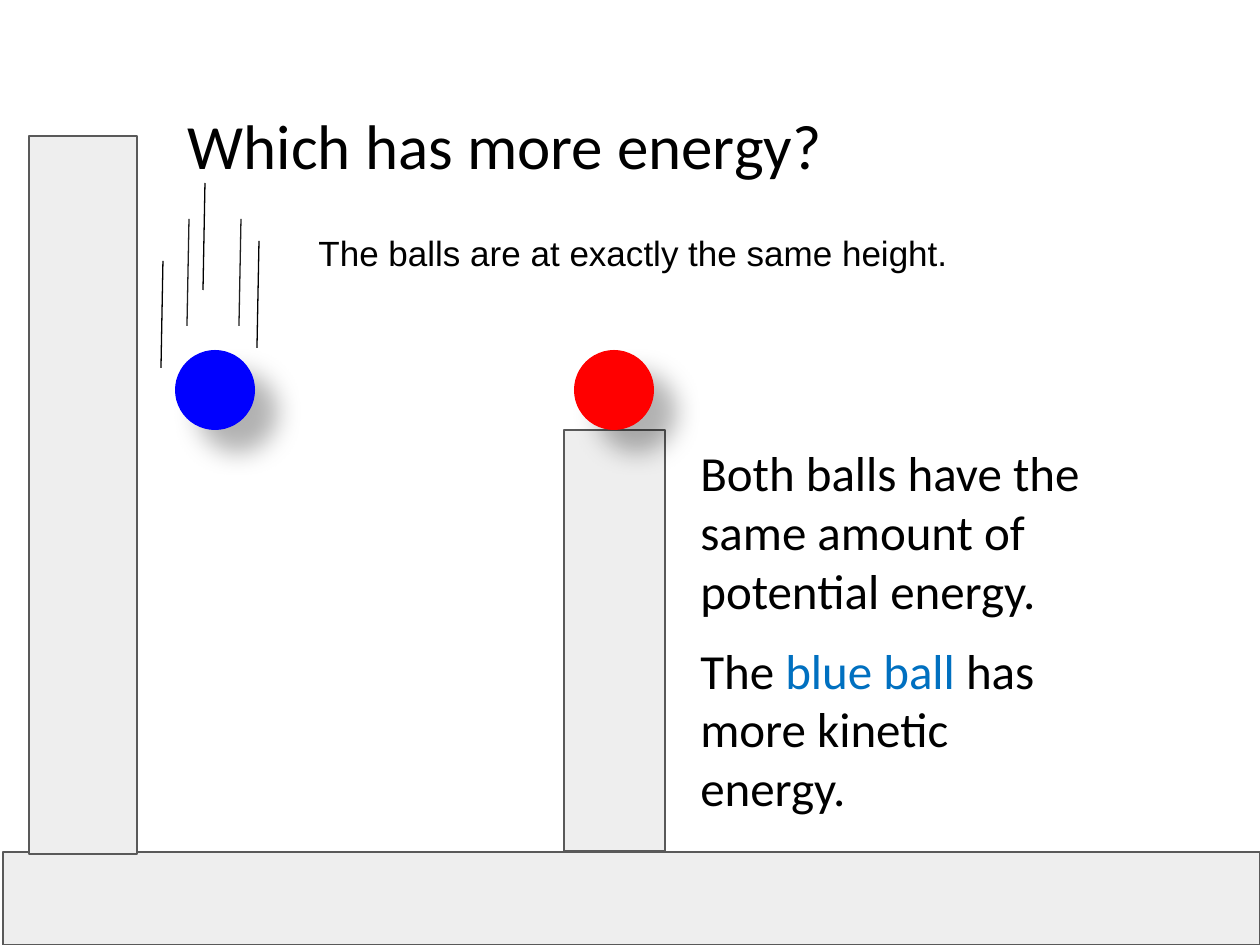
from lxml import etree
from pptx import Presentation
from pptx.dml.color import RGBColor
from pptx.enum.shapes import MSO_CONNECTOR, MSO_SHAPE
from pptx.enum.text import MSO_ANCHOR, MSO_AUTO_SIZE, PP_ALIGN
from pptx.oxml import parse_xml
from pptx.oxml.ns import nsdecls, qn
from pptx.util import Emu, Inches, Pt

RECT, OVAL = MSO_SHAPE.RECTANGLE, MSO_SHAPE.OVAL
STRAIGHT = MSO_CONNECTOR.STRAIGHT
TOP, LEFT, FIXED = MSO_ANCHOR.TOP, PP_ALIGN.LEFT, MSO_AUTO_SIZE.NONE

BLACK = RGBColor(0, 0, 0)
DARK = RGBColor(0x20, 0x20, 0x20)
GREY = RGBColor(0xEE, 0xEE, 0xEE)
EDGE = RGBColor(0x59, 0x59, 0x59)
BLUE = RGBColor(0, 0, 0xFF)
RED = RGBColor(0xFF, 0, 0)
SKY = RGBColor(0, 0x70, 0xC0)

SHADOW = (
    f'<a:effectLst {nsdecls("a")}>'
    '<a:outerShdw blurRad="190500" dist="228600" dir="2700000" algn="tl" rotWithShape="0">'
    '<a:srgbClr val="000000"><a:alpha val="30000"/></a:srgbClr>'
    '</a:outerShdw></a:effectLst>'
)
BALL = 80
STREAK = (2, -107)


def px(*sizes):
    return [Emu(round(size * 914400 / 126)) for size in sizes]


def block(slide, *box):
    shape = slide.shapes.add_shape(RECT, *px(*box))
    shape.shadow.inherit = False
    shape.fill.solid()
    shape.fill.fore_color.rgb = GREY
    shape.line.color.rgb = EDGE
    shape.line.width = Pt(1.5)


def ball(slide, x, y, color):
    shape = slide.shapes.add_shape(OVAL, *px(x, y, BALL, BALL))
    shape.fill.solid()
    shape.fill.fore_color.rgb = color
    shape.line.fill.background()
    shape._element.spPr.append(parse_xml(SHADOW))


def streak(slide, x, y, color):
    """Draw one motion line upwards from its lower end."""
    dx, dy = STREAK
    line = slide.shapes.add_connector(STRAIGHT, *px(x, y, x + dx, y + dy))
    line.line.color.rgb = color
    line.line.width = Pt(0.75)
    etree.SubElement(line._element.spPr, qn("a:effectLst"))


def write(shape, box, paras, font, size, after=0):
    """Place a text shape and fill it with paragraphs of (text, colour) runs."""
    shape.left, shape.top, shape.width, shape.height = px(*box)
    frame = shape.text_frame
    layout = {"word_wrap": True, "auto_size": FIXED, "vertical_anchor": TOP}
    for side in ("left", "top", "right", "bottom"):
        layout[f"margin_{side}"] = Inches(0.1)
    for name, value in layout.items():
        setattr(frame, name, value)
    for i, runs in enumerate(paras):
        para = frame.add_paragraph() if i else frame.paragraphs[0]
        para.alignment = LEFT
        para.space_after = Pt(after)
        for text, color in runs:
            run = para.add_run()
            run.text = text
            for name, value in {"name": font, "size": Pt(size)}.items():
                setattr(run.font, name, value)
            run.font.color.rgb = color


def textbox(slide, box, *style, **extra):
    write(slide.shapes.add_textbox(*px(*box)), box, *style, **extra)


def main():
    deck = Presentation()
    deck.slide_width, deck.slide_height = px(1260, 945)
    slide = deck.slides.add_slide(deck.slide_layouts[5])

    block(slide, 3, 852, 1257, 93)
    block(slide, 29, 136, 108, 718)
    ball(slide, 175, 350, BLUE)
    block(slide, 564, 430, 101, 421)
    ball(slide, 574, 350, RED)

    write(slide.shapes.title, (175, 94, 907, 156),
          [[("Which has more energy?", BLACK)]], "Calibri", 36)
    for x, y, color in (
        (239, 326, DARK),
        (257, 348, BLACK),
        (203, 290, BLACK),
        (187, 326, DARK),
        (161, 368, BLACK),
    ):
        streak(slide, x, y, color)

    textbox(slide, (306, 219, 785, 74),
            [[("The balls are at exactly the same height.", BLACK)]], "Arial", 20)
    answer = [
        [("Both balls have the same amount of potential energy.", BLACK)],
        [("The ", BLACK), ("blue ball ", SKY), ("has more kinetic energy.", BLACK)],
    ]
    textbox(slide, (688, 430, 428, 411), answer, "Calibri", 28, after=12)
    deck.save("out.pptx")


if __name__ == "__main__":
    main()
